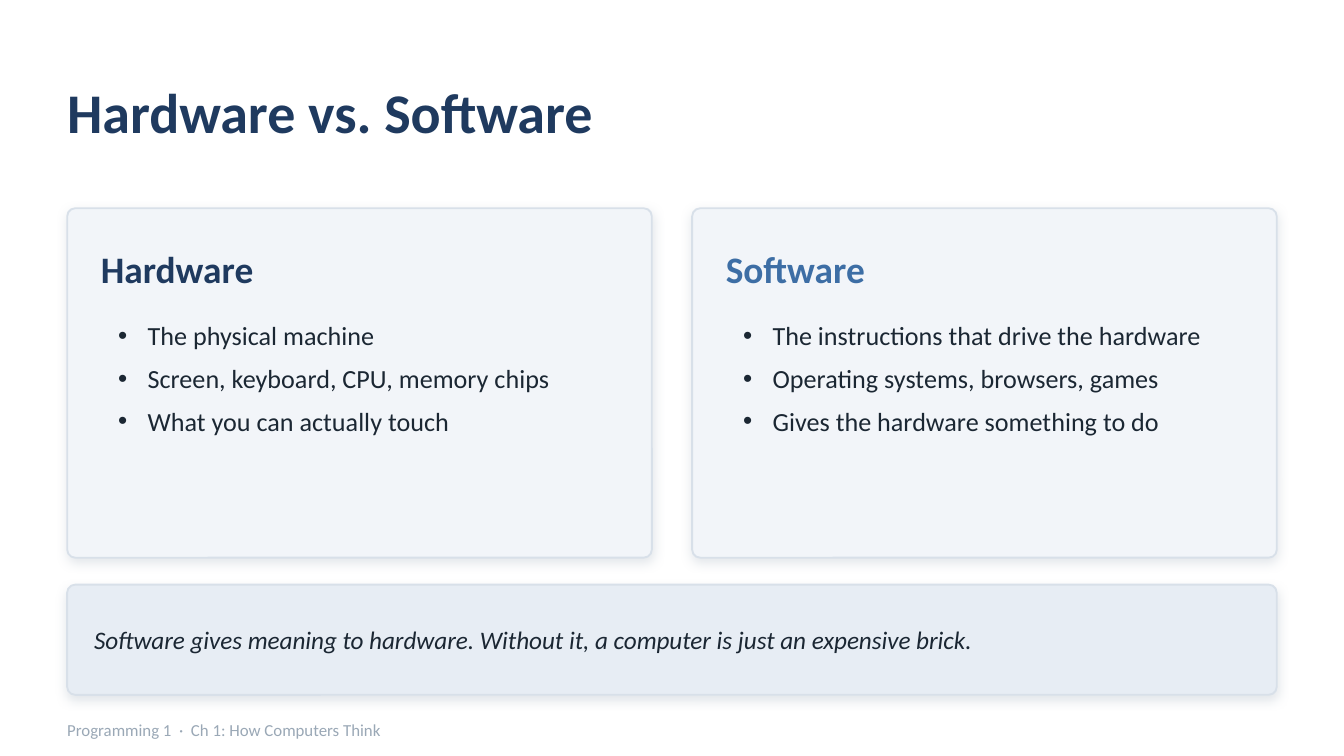
from dataclasses import dataclass

from lxml import etree
from pptx import Presentation
from pptx import util as u
from pptx.dml.color import RGBColor
from pptx.enum import shapes, text
from pptx.oxml import ns


@dataclass(frozen=True)
class Theme:
    font: str = "Calibri"
    dot: str = "Arial"
    navy: str = "1F3A5F"
    blue: str = "3D6EA5"
    ink: str = "1B2733"
    muted: str = "9AA8B6"
    edge: str = "D8E0E9"
    panel: str = "F2F5F9"
    band: str = "E7EDF4"
    title: float = 30
    head: float = 20
    body: float = 14
    quote: float = 13.5
    foot: float = 9


@dataclass(frozen=True)
class Box:
    x: float
    y: float
    w: float
    h: float

    def place(self) -> tuple:
        return tuple(u.Inches(v) for v in (self.x, self.y, self.w, self.h))


@dataclass(frozen=True)
class Card:
    head: str
    color: str
    items: tuple


THEME = Theme()
LEFT, WIDTH, GAP = 0.5, 9, 0.3
RADIUS = 0.06
CARDS = (
    Card("Hardware", THEME.navy, (
        "The physical machine",
        "Screen, keyboard, CPU, memory chips",
        "What you can actually touch")),
    Card("Software", THEME.blue, (
        "The instructions that drive the hardware",
        "Operating systems, browsers, games",
        "Gives the hardware something to do")),
)


def bullet(para, indent: float = 0.22) -> None:
    props = para._p.get_or_add_pPr()
    props.set("marL", str(u.Inches(indent)))
    props.set("indent", str(-u.Inches(indent)))
    etree.SubElement(props, ns.qn("a:buSzPct"), val="100000")
    etree.SubElement(props, ns.qn("a:buFont"), typeface=THEME.dot)
    etree.SubElement(props, ns.qn("a:buChar"), char="•")


def write(shape, *lines: str, size: float, color: str, bold: bool = False,
          italic: bool = False, listed: bool = False) -> None:
    """Fill a shape with paragraphs; listed ones get bullets and box margins."""
    frame = shape.text_frame
    frame.word_wrap = True
    frame.auto_size = text.MSO_AUTO_SIZE.NONE
    if listed:
        frame.vertical_anchor = text.MSO_ANCHOR.TOP
    else:
        frame.vertical_anchor = text.MSO_ANCHOR.MIDDLE
        frame.margin_left = frame.margin_right = 0
        frame.margin_top = frame.margin_bottom = 0
    for n, line in enumerate(lines):
        para = frame.add_paragraph() if n else frame.paragraphs[0]
        para.alignment = text.PP_ALIGN.LEFT
        if listed:
            para.space_after = u.Pt(6)
            bullet(para)
        run = para.add_run()
        run.text = line
        font = run.font
        font.name, font.size = THEME.font, u.Pt(size)
        font.bold, font.italic = bold, italic
        font.color.rgb = RGBColor.from_string(color)


def label(slide, box: Box, *lines: str, **style) -> None:
    write(slide.shapes.add_textbox(*box.place()), *lines, **style)


def panel(slide, box: Box, fill: str) -> None:
    """Draw a rounded panel with a thin edge and a soft shadow below it."""
    shape = slide.shapes.add_shape(
        shapes.MSO_SHAPE.ROUNDED_RECTANGLE, *box.place())
    shape.adjustments[0] = RADIUS / min(box.w, box.h)
    shape.fill.solid()
    shape.fill.fore_color.rgb = RGBColor.from_string(fill)
    shape.line.color.rgb = RGBColor.from_string(THEME.edge)
    shape.line.width = u.Pt(1)
    shape.shadow.inherit = False
    glow = etree.SubElement(
        shape._element.spPr.find(ns.qn("a:effectLst")), ns.qn("a:outerShdw"),
        blurRad=str(u.Pt(6)), dist=str(u.Pt(2)), dir=str(90 * 60000),
        algn="bl", rotWithShape="0")
    tint = etree.SubElement(glow, ns.qn("a:srgbClr"), val=THEME.muted)
    etree.SubElement(tint, ns.qn("a:alpha"), val="28000")


def draw(slide, card: Card, box: Box) -> None:
    panel(slide, box, THEME.panel)
    inner = box.w - 0.5
    label(slide, Box(box.x + 0.25, box.y + 0.2, inner, 0.5), card.head,
          size=THEME.head, color=card.color, bold=True)
    label(slide, Box(box.x + 0.28, box.y + 0.78, inner, 1.6), *card.items,
          size=THEME.body, color=THEME.ink, listed=True)


def main() -> None:
    deck = Presentation()
    deck.slide_width, deck.slide_height = u.Inches(10), u.Inches(10 * 9 / 16)
    slide = deck.slides.add_slide(deck.slide_layouts[5])

    title = slide.shapes.title
    title.left, title.top, title.width, title.height = Box(
        LEFT, 0.4, WIDTH, 0.85).place()
    write(title, "Hardware vs. Software",
          size=THEME.title, color=THEME.navy, bold=True)

    wide = (WIDTH - GAP * (len(CARDS) - 1)) / len(CARDS)
    for n, card in enumerate(CARDS):
        draw(slide, card, Box(LEFT + n * (wide + GAP), 1.55, wide, 2.6))

    panel(slide, Box(LEFT, 4.35, WIDTH, 0.82), THEME.band)
    label(slide, Box(LEFT + 0.2, 4.4, WIDTH - 0.4, 0.72),
          "Software gives meaning to hardware. "
          "Without it, a computer is just an expensive brick.",
          size=THEME.quote, color=THEME.ink, italic=True)
    label(slide, Box(LEFT, 5.3, 8, 0.26),
          "Programming 1  ·  Ch 1: How Computers Think",
          size=THEME.foot, color=THEME.muted)
    deck.save("out.pptx")


if __name__ == "__main__":
    main()
